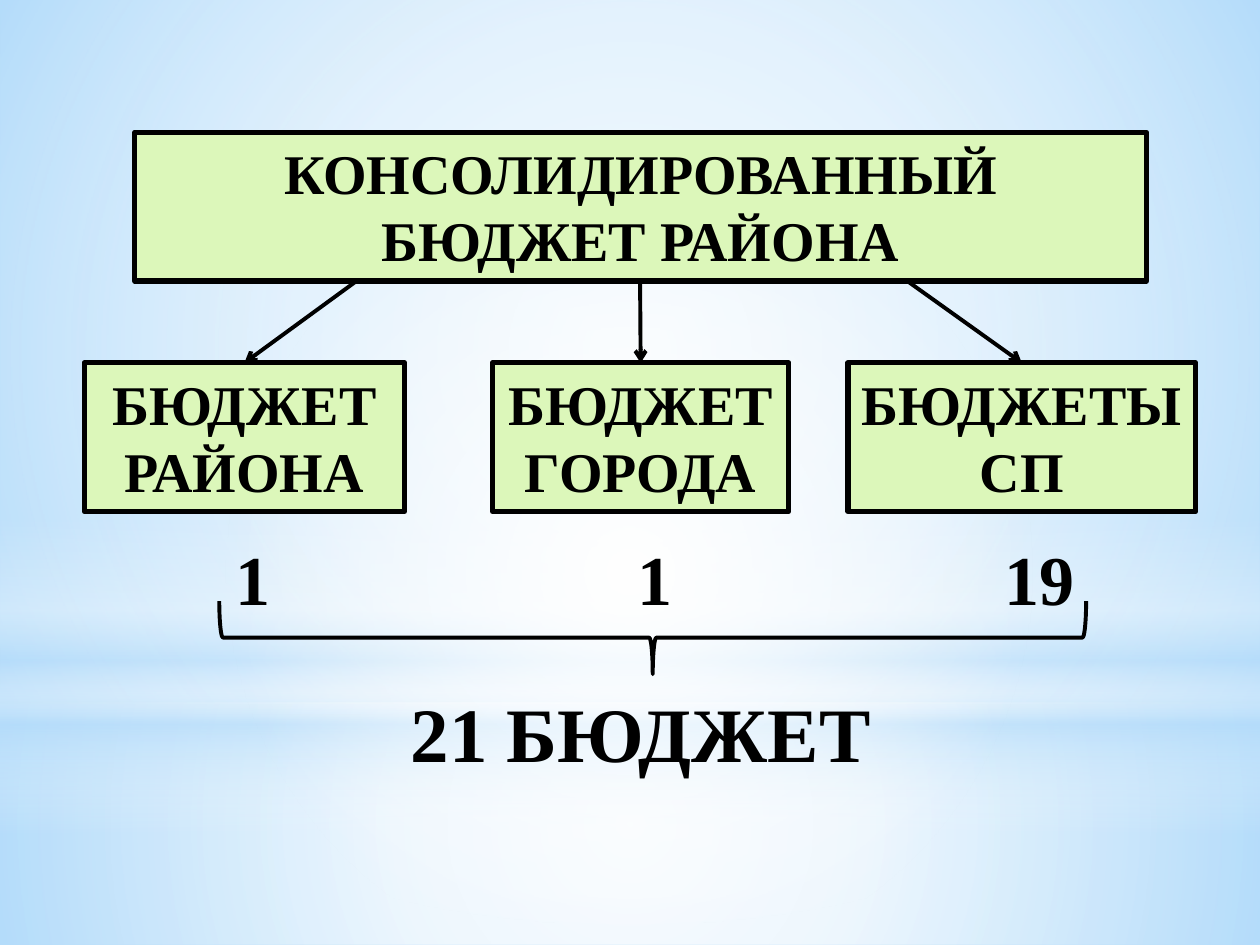
from lxml import etree
from pptx import Presentation, util as u
from pptx.dml.color import RGBColor
from pptx.enum import shapes, text
from pptx.oxml import ns

THEME = {
    "font": "Times New Roman", "ink": "000000", "box": "DCF7BA",
    "sky": "B4DCFA", "white": "FFFFFF",
    "box_size": 32, "count_size": 40, "total_size": 44,
    "box_line": 3, "thin_line": 2.25,
}
SKY, WHITE = THEME["sky"], THEME["white"]

# Content
HEADING = ["КОНСОЛИДИРОВАННЫЙ БЮДЖЕТ РАЙОНА"]
TOTAL = ["21 БЮДЖЕТ"]
# lines, left, width, arrow start, count, centre of count
BUDGETS = [
    (["БЮДЖЕТ", "РАЙОНА"], 0.67, 2.54, 2.83, "1", 2.01),
    (["БЮДЖЕТ", "ГОРОДА"], 3.91, 2.35, 5.08, "1", 5.2),
    (["БЮДЖЕТЫ", "СП"], 6.73, 2.76, 7.2, "19", 8.25),
]
# preset, frame, radial, stops as (position %, colour, opacity %)
GLOWS = [
    ("RECTANGLE", (0, 5.58, 10, 1.92), True,
     [(0, WHITE, 91), (37, WHITE, 76), (100, SKY, 79)]),
    ("RECTANGLE", (0, 0, 10, 5.58), True,
     [(0, WHITE, 89), (48, WHITE, 62), (100, SKY, 79)]),
    ("RECTANGLE", (0, 4.12, 10, 2.5), False,
     [(0, WHITE, 0), (29, WHITE, 30), (45, SKY, 40),
      (55, WHITE, 26), (65, SKY, 60), (100, WHITE, 0)]),
    ("OVAL", (0, 1.75, 10, 5.58), True, [(0, WHITE, 100), (56, WHITE, 0)]),
]

# Layout
HEADING_FRAME = (1.07, 1.05, 8.03, 1.18)
BUDGET_TOP, BOX_HEIGHT = 2.88, 1.18
COUNTS_FRAME = (0.67, 4.2, 8.82, 0.77)
BRACE_FRAME = (4.89, 1.62, 0.58, 6.88)
TOTAL_FRAME = (1.07, 5.39, 8.03, 0.84)
TEXT_INSET = 0.1


def inches(frame):
    return [u.Inches(value) for value in frame]


def rgb(name):
    return RGBColor.from_string(THEME[name])


def add_node(parent, tag, **attributes):
    return etree.SubElement(parent, ns.qn(tag),
                            {key: str(value) for key, value in attributes.items()})


def add_preset(slide, preset, frame):
    shape = slide.shapes.add_shape(getattr(shapes.MSO_SHAPE, preset), *inches(frame))
    shape.shadow.inherit = False
    shape.fill.background()
    shape.line.fill.background()
    return shape


def draw_line(shape, width):
    shape.line.color.rgb = rgb("ink")
    shape.line.width = u.Pt(width)


def add_glow(slide, preset, frame, radial, stops):
    properties = add_preset(slide, preset, frame).element.spPr
    gradient = etree.Element(ns.qn("a:gradFill"), rotWithShape="1")
    stop_list = add_node(gradient, "a:gsLst")
    for position, colour, opacity in stops:
        stop = add_node(stop_list, "a:gs", pos=position * 1000)
        add_node(add_node(stop, "a:srgbClr", val=colour), "a:alpha", val=opacity * 1000)
    if radial:
        path = add_node(gradient, "a:path", path="circle")
        add_node(path, "a:fillToRect", l=50000, t=50000, r=50000, b=50000)
    else:
        add_node(gradient, "a:lin", ang=90 * 60000, scaled=0)
    properties.replace(properties.find(ns.qn("a:noFill")), gradient)


def write(shape, lines, size, align=text.PP_ALIGN.CENTER):
    frame = shape.text_frame
    frame.word_wrap = True
    frame.vertical_anchor = text.MSO_ANCHOR.TOP
    frame.text = "\n".join(lines)
    for paragraph in frame.paragraphs:
        paragraph.alignment = align
        for run in paragraph.runs:
            run.font.name = THEME["font"]
            run.font.size = u.Pt(size)
            run.font.bold = True
            run.font.color.rgb = rgb("ink")


def add_box(slide, lines, frame):
    box = add_preset(slide, "RECTANGLE", frame)
    box.fill.solid()
    box.fill.fore_color.rgb = rgb("box")
    draw_line(box, THEME["box_line"])
    write(box, lines, THEME["box_size"])


def add_arrow(slide, start, end):
    arrow = slide.shapes.add_connector(
        shapes.MSO_CONNECTOR.STRAIGHT, *inches(start + end))
    draw_line(arrow, THEME["thin_line"])
    add_node(arrow.line._get_or_add_ln(), "a:tailEnd", type="arrow")
    add_node(arrow.element.spPr, "a:effectLst")


def add_counts(slide):
    counts = slide.shapes.add_textbox(*inches(COUNTS_FRAME))
    line = "".join("\t" + count for *_, count, _ in BUDGETS)
    write(counts, [line], THEME["count_size"], text.PP_ALIGN.LEFT)
    properties = counts.text_frame.paragraphs[0]._p.get_or_add_pPr()
    tabs = add_node(properties, "a:tabLst")
    for *_, centre in BUDGETS:
        position = u.Inches(centre - COUNTS_FRAME[0] - TEXT_INSET)
        add_node(tabs, "a:tab", pos=int(position), algn="ctr")


def main():
    deck = Presentation()
    deck.slide_width, deck.slide_height = u.Inches(10), u.Inches(7.5)
    slide = deck.slides.add_slide(deck.slide_layouts[6])

    # Backdrop
    slide.background.fill.solid()
    slide.background.fill.fore_color.rgb = rgb("sky")
    for glow in GLOWS:
        add_glow(slide, *glow)

    # Consolidated budget and its parts
    add_box(slide, HEADING, HEADING_FRAME)
    heading_bottom = HEADING_FRAME[1] + HEADING_FRAME[3]
    for lines, left, width, start, *_ in BUDGETS:
        add_box(slide, lines, (left, BUDGET_TOP, width, BOX_HEIGHT))
        add_arrow(slide, (start, heading_bottom), (left + width / 2, BUDGET_TOP))

    # Counts, brace and total
    add_counts(slide)
    brace = add_preset(slide, "RIGHT_BRACE", BRACE_FRAME)
    brace.rotation = 90
    brace.adjustments[0] = 0.05
    draw_line(brace, THEME["thin_line"])
    total = slide.shapes.add_textbox(*inches(TOTAL_FRAME))
    write(total, TOTAL, THEME["total_size"])

    deck.save("out.pptx")


if __name__ == "__main__":
    main()
